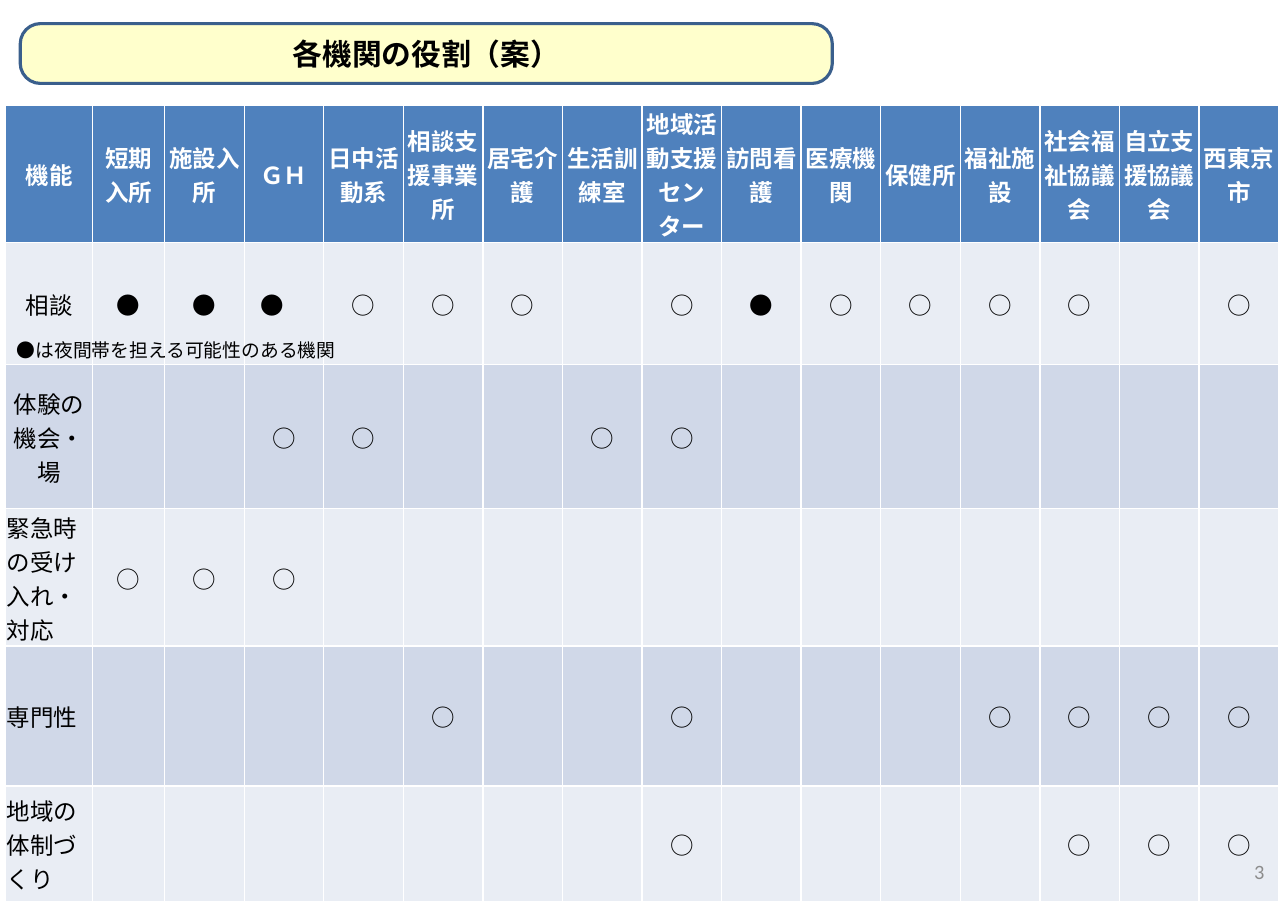
from lxml import etree
from pptx import Presentation
from pptx.dml.color import RGBColor
from pptx.enum.shapes import MSO_SHAPE
from pptx.enum.text import MSO_ANCHOR, MSO_AUTO_SIZE, PP_ALIGN
from pptx.oxml.ns import qn
from pptx.util import Inches, Pt

LEFT, MID, RIGHT = PP_ALIGN.LEFT, PP_ALIGN.CENTER, PP_ALIGN.RIGHT
ROUND = MSO_SHAPE.ROUNDED_RECTANGLE
ANCHOR = MSO_ANCHOR.MIDDLE
FONT = "Noto Sans CJK JP"

TITLE = "各機関の役割（案）"
NOTE = "●は夜間帯を担える可能性のある機関"
PAGE = "3"
HEADS = ["機能", "短期入所", "施設入所", "ＧＨ", "日中活動系", "相談支援事業所",
         "居宅介護", "生活訓練室", "地域活動支援センター", "訪問看護", "医療機関",
         "保健所", "福祉施設", "社会福祉協議会", "自立支援協議会", "西東京市"]
ROLES = [
    ("相談", MID, "●●●○○○-○●○○○○-○"),
    ("体験の機会・場", MID, "--○○--○○-------"),
    ("緊急時の受け入れ・対応", LEFT, "○○○------------"),
    ("専門性", LEFT, "----○--○---○○○○"),
    ("地域の体制づくり", LEFT, "-------○----○○○"),
]
HEIGHTS = [1.22, 1.08, 1.28, 1.21, 1.24, 1.03]
BANDS = ["E9EDF4", "D0D8E8"]
WIDE, TALL = 11.42, 8.03
TABLE = (0.05, 0.93, 11.29, sum(HEIGHTS))
FIRST = [0.77, 0.64]
REST = (TABLE[2] - sum(FIRST)) / (len(HEADS) - len(FIRST))
WIDTHS = FIRST + [REST] * (len(HEADS) - len(FIRST))
BANNER = (0.18, 0.21, 7.2, 0.53)


def color(code):
    return RGBColor.from_string(code)


def inches(box):
    return [Inches(n) for n in box]


def write(frame, text, size=15, ink="000000", bold=False, align=MID, face=FONT):
    para = frame.paragraphs[0]
    para.alignment = align
    if not text:
        para.font.size = Pt(size)
        return
    run = para.add_run()
    run.text = text
    font = run.font
    font.size, font.bold, font.name = Pt(size), bold, face
    font.color.rgb = color(ink)
    latin = run._r.rPr.find(qn("a:latin"))
    east = etree.Element(qn("a:ea"), typeface=face)
    latin.addnext(east)


def rule(cell):
    props = cell._tc.get_or_add_tcPr()
    for spot, side in enumerate("LRTB"):
        line = etree.Element(qn("a:ln" + side), w=str(Pt(1)))
        fill = etree.SubElement(line, qn("a:solidFill"))
        etree.SubElement(fill, qn("a:srgbClr"), val="FFFFFF")
        props.insert(spot, line)


def paint(cell, text, fill, **form):
    cell.margin_left = cell.margin_right = cell.margin_top = Inches(0.01)
    cell.margin_bottom = 0
    cell.vertical_anchor = ANCHOR
    rule(cell)
    cell.fill.solid()
    cell.fill.fore_color.rgb = color(fill)
    write(cell.text_frame, text, **form)


def label(slide, box, text, **form):
    frame = slide.shapes.add_textbox(*inches(box)).text_frame
    frame.word_wrap = True
    frame.vertical_anchor = ANCHOR
    write(frame, text, **form)


def banner(slide):
    plate = slide.shapes.add_shape(ROUND, *inches(BANNER))
    plate.adjustments[0] = 0.337
    plate.shadow.inherit = False
    plate.fill.solid()
    plate.fill.fore_color.rgb = color("FFFFCC")
    plate.line.color.rgb = color("3A5F8C")
    plate.line.width = Pt(2)
    title = slide.shapes.title
    title._element.addprevious(plate._element)
    title.left, title.top, title.width, title.height = inches(BANNER)
    frame = title.text_frame
    frame.auto_size = MSO_AUTO_SIZE.NONE
    frame.vertical_anchor = ANCHOR
    write(frame, TITLE, size=19, bold=True)


def grid(slide):
    table = slide.shapes.add_table(len(HEIGHTS), len(HEADS), *inches(TABLE)).table
    for col, width in zip(table.columns, WIDTHS):
        col.width = Inches(width)
    for row, height in zip(table.rows, HEIGHTS):
        row.height = Inches(height)
    for c, head in enumerate(HEADS):
        paint(table.cell(0, c), head, "4F81BD", ink="FFFFFF", bold=True)
    for r, (name, align, marks) in enumerate(ROLES, 1):
        fill = BANDS[(r - 1) % 2]
        paint(table.cell(r, 0), name, fill, align=align)
        for c, mark in enumerate(marks, 1):
            paint(table.cell(r, c), mark.strip("-"), fill)
    table.cell(1, HEADS.index("ＧＨ")).margin_right = Inches(0.22)


def main():
    deck = Presentation()
    deck.slide_width, deck.slide_height = inches((WIDE, TALL))
    slide = deck.slides.add_slide(deck.slide_layouts[5])
    banner(slide)
    grid(slide)
    label(slide, (8.65, 7.51, 2.66, 0.43), PAGE, size=13, ink="8C8C8C",
          align=RIGHT, face="Calibri")
    label(slide, (0.05, 2.95, 3.65, 0.3), NOTE, size=12, align=LEFT)
    deck.save("out.pptx")


if __name__ == "__main__":
    main()
